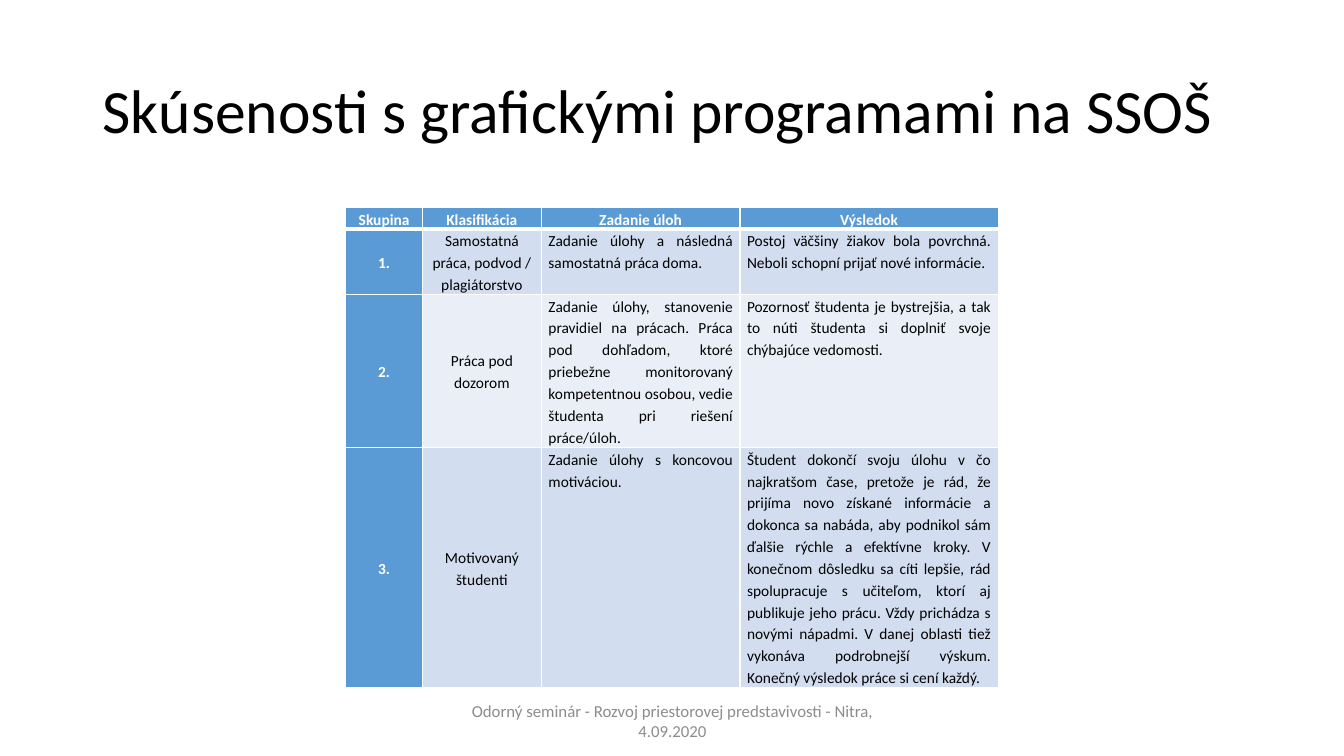
import pptx
import pptx.util
import pptx.dml.color
import pptx.enum.text
import pptx.oxml
import pptx.oxml.ns

Inches = pptx.util.Inches
Pt = pptx.util.Pt
ALIGN = pptx.enum.text.PP_ALIGN
ANCHOR = pptx.enum.text.MSO_ANCHOR

COLORS = {
    "text": "000000",
    "footer": "8C8C8C",
    "white": "FFFFFF",
    "header": "5B9BD5",
    "odd": "D2DEEF",
    "even": "EAEFF7",
}


def add_run(p, text, size, color, bold=False):
    r = p.add_run()
    r.text = text
    r.font.name = "Calibri"
    r.font.size = Pt(size)
    r.font.bold = bold
    r.font.color.rgb = pptx.dml.color.RGBColor.from_string(COLORS[color])


def add_border(cell, side, width):
    ln = pptx.oxml.parse_xml(
        f'<a:{side} {pptx.oxml.ns.nsdecls("a")} w="{Pt(width)}"><a:solidFill>'
        f'<a:srgbClr val="{COLORS["white"]}"/></a:solidFill></a:{side}>'
    )
    cell._tc.get_or_add_tcPr().append(ln)


prs = pptx.Presentation()
prs.slide_width = Inches(13.33)
prs.slide_height = Inches(7.5)
s = prs.slides.add_slide(prs.slide_layouts[6])

texts = [
    ("Skúsenosti s grafickými programami na SSOŠ",
     (0.92, 0.4, 11.5, 1.45), 44, "text", ALIGN.LEFT, 0.9),
    ("Odorný seminár - Rozvoj priestorovej predstavivosti - Nitra, 4.09.2020",
     (4.42, 6.95, 4.5, 0.4), 12, "footer", ALIGN.CENTER, 1.0),
]
for text, box, size, color, align, spacing in texts:
    tf = s.shapes.add_textbox(*map(Inches, box)).text_frame
    tf.word_wrap = True
    tf.vertical_anchor = ANCHOR.MIDDLE
    p = tf.paragraphs[0]
    p.alignment = align
    p.line_spacing = spacing
    add_run(p, text, size, color)

rows = [
    ["Skupina", "Klasifikácia", "Zadanie úloh", "Výsledok"],
    ["1.", "Samostatná práca, podvod /\nplagiátorstvo",
     "Zadanie úlohy a následná samostatná práca doma.",
     "Postoj väčšiny žiakov bola povrchná. Neboli schopní prijať nové informácie."],
    ["2.", "Práca pod dozorom",
     "Zadanie úlohy, stanovenie pravidiel na prácach. Práca pod dohľadom, ktoré "
     "priebežne monitorovaný kompetentnou osobou, vedie študenta pri riešení práce/úloh.",
     "Pozornosť študenta je bystrejšia, a tak to núti študenta si doplniť svoje "
     "chýbajúce vedomosti."],
    ["3.", "Motivovaný študenti",
     "Zadanie úlohy s koncovou motiváciou.",
     "Študent dokončí svoju úlohu v čo najkratšom čase, pretože je rád, že prijíma "
     "novo získané informácie a dokonca sa nabáda, aby podnikol sám ďalšie rýchle "
     "a efektívne kroky. V konečnom dôsledku sa cíti lepšie, rád spolupracuje "
     "s učiteľom, ktorí aj publikuje jeho prácu. Vždy prichádza s novými nápadmi. "
     "V danej oblasti tiež vykonáva podrobnejší výskum. Konečný výsledok práce si "
     "cení každý."],
]
col_widths = [0.76, 1.18, 1.97, 2.56]
row_heights = [0.21, 0.65, 1.52, 2.38]

table = s.shapes.add_table(
    len(rows), len(col_widths), Inches(3.43), Inches(2.06),
    Inches(sum(col_widths)), Inches(sum(row_heights))).table
for column, width in zip(table.columns, col_widths):
    column.width = Inches(width)
for row, height in zip(table.rows, row_heights):
    row.height = Inches(height)

for i, row in enumerate(rows):
    for j, text in enumerate(row):
        cell = table.cell(i, j)
        heading = i == 0 or j == 0
        cell.margin_left = cell.margin_right = Inches(0.07)
        cell.margin_top = cell.margin_bottom = 0
        cell.vertical_anchor = ANCHOR.MIDDLE if i > 0 and j < 2 else ANCHOR.TOP

        for side in ("lnL", "lnR", "lnT", "lnB"):
            thick = (i == 0 and side == "lnB") or (i == 1 and side == "lnT")
            add_border(cell, side, 3 if thick else 1)
        fill = "header" if heading else "odd" if i % 2 else "even"
        cell.fill.solid()
        cell.fill.fore_color.rgb = pptx.dml.color.RGBColor.from_string(COLORS[fill])

        lines = text.split("\n")
        tf = cell.text_frame
        for n, line in enumerate(lines):
            p = tf.add_paragraph() if n else tf.paragraphs[0]
            p.alignment = ALIGN.CENTER if i == 0 or j < 2 else ALIGN.JUSTIFY
            p.line_spacing = 1.15
            p.space_after = Pt(10 if len(lines) == 1 else 0)
            add_run(p, line, 11, "white" if heading else "text", heading)

prs.save("out.pptx")
